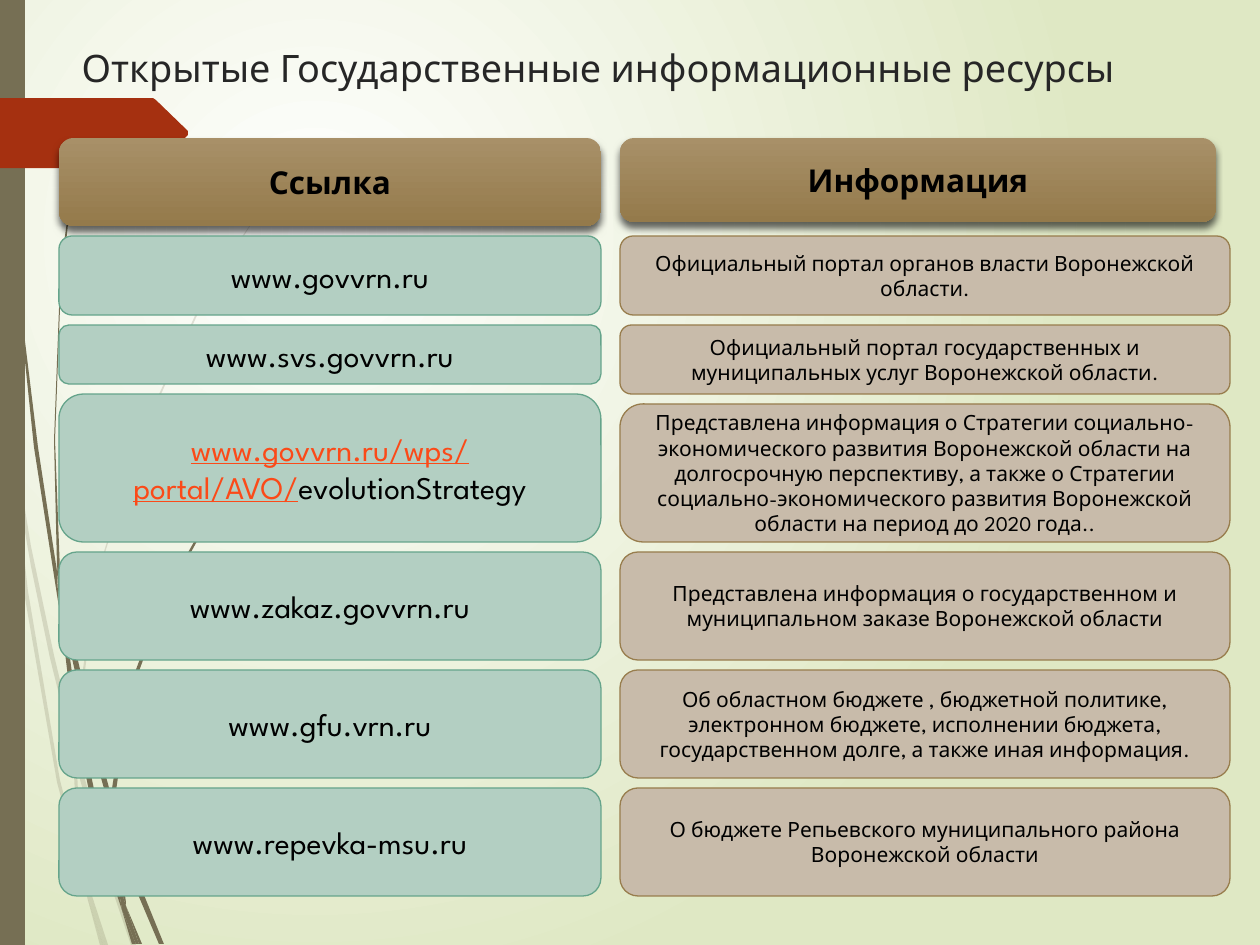
"""Build a slide listing open government information resources in two columns."""
import pptx
import pptx.util
import pptx.oxml
import pptx.dml.color
import pptx.enum.text
import pptx.enum.shapes
import pptx.oxml.ns

PX = 914400 / 126
FONT = "League Spartan"
COLORS = {
    "light": "FFFFFF", "meadow": "DFE8C4", "stem": "766F54", "tag": "A53010",
    "title": "262626", "text": "000000", "link": "FB4A18",
    "head_top": "A89068", "head_bottom": "947A4B",
    "green": "B3CFC2", "green_line": "65A48B",
    "tan": "C8BBAA", "tan_line": "987D4D",
}
TITLE = "Открытые Государственные информационные ресурсы"
TOP, GAP = 236, 10
COLUMNS = [
    {"head": "Ссылка", "head_box": (59, 138, 542, 88), "x": 59, "w": 542,
     "fill": "green", "line": "green_line", "size": 18,
     "rows": [
         (79, [[("www.govvrn.ru", "text")]]),
         (59, [[("www.svs.govvrn.ru", "text")]]),
         (148, [[("www.govvrn.ru/wps/", "link")],
                [("portal/AVO/", "link"), ("evolutionStrategy", "text")]]),
         (108, [[("www.zakaz.govvrn.ru", "text")]]),
         (108, [[("www.gfu.vrn.ru", "text")]]),
         (108, [[("www.repevka-msu.ru", "text")]]),
     ]},
    {"head": "Информация", "head_box": (620, 138, 596, 84), "x": 620, "w": 610,
     "fill": "tan", "line": "tan_line", "size": 12,
     "rows": [
         (79, [[("Официальный портал органов власти Воронежской области.", "text")]]),
         (69, [[("Официальный портал государственных и муниципальных услуг "
                 "Воронежской области.", "text")]]),
         (138, [[("Представлена информация о Стратегии социально-экономического развития "
                  "Воронежской области на долгосрочную перспективу, а также о Стратегии "
                  "социально-экономического развития Воронежской области на период "
                  "до 2020 года..", "text")]]),
         (108, [[("Представлена информация о государственном и муниципальном заказе "
                  "Воронежской области", "text")]]),
         (108, [[("Об областном бюджете , бюджетной политике, электронном бюджете, "
                  "исполнении бюджета, государственном долге, а также иная информация.",
                  "text")]]),
         (108, [[("О бюджете Репьевского муниципального района Воронежской области",
                  "text")]]),
     ]},
]
PALE_STEMS = [
    [(50, 658), (74, 755), (74, 738), (54, 655), (31, 546), (13, 435), (15, 474), (31, 566)],
    [(81, 765), (77, 751), (77, 769), (107, 874), (131, 945), (136, 945), (111, 872)],
    [(105, 945), (108, 945), (92, 896)],
    [(81, 861), (60, 780), (28, 591), (15, 474), (10, 441), (24, 592), (57, 782),
     (81, 873), (88, 900), (87, 891)],
    [(73, 755), (76, 814), (81, 861), (84, 872), (92, 896), (91, 890), (79, 814),
     (77, 769), (77, 766)],
    [(77, 736), (96, 582), (140, 440), (200, 309), (236, 249), (253, 221), (273, 194),
     (273, 193), (253, 221), (234, 248), (199, 307), (139, 438), (95, 581), (74, 736),
     (74, 738), (77, 751)],
    [(88, 900), (100, 945), (103, 945)],
    [(84, 872), (81, 861), (87, 891), (88, 900), (103, 945), (105, 945), (92, 896)],
]
DARK_STEMS = [
    [(6, 139), (18, 294), (34, 447), (58, 601), (59, 606), (57, 576), (57, 571),
     (38, 447), (19, 292), (8, 137), (5, 60), (4, 0), (3, 0), (3, 60)],
    [(92, 746), (111, 813), (111, 798), (111, 795), (97, 743), (63, 595), (67, 636)],
    [(118, 818), (115, 808), (115, 827), (137, 892), (159, 944), (164, 944), (142, 890)],
    [(115, 871), (102, 828), (76, 701), (67, 636), (59, 601), (71, 702), (97, 830),
     (116, 892), (122, 910), (121, 903)],
    [(63, 595), (60, 571), (55, 440), (60, 309), (66, 243), (73, 178), (64, 243),
     (59, 309), (54, 440), (57, 566), (62, 595)],
    [(139, 944), (142, 944), (126, 906)],
    [(59, 601), (67, 636), (63, 595), (62, 595), (57, 566), (57, 571)],
    [(115, 798), (130, 696), (165, 600), (213, 512), (241, 471), (256, 452), (272, 433),
     (271, 433), (256, 451), (241, 470), (212, 510), (163, 597), (127, 694), (111, 795),
     (115, 808)],
    [(122, 910), (132, 944), (136, 944)],
    [(111, 813), (115, 871), (121, 890), (126, 906), (126, 902), (115, 827), (113, 820)],
    [(121, 890), (115, 871), (121, 903), (122, 910), (136, 944), (139, 944), (126, 906)],
]
TAG = [(188, 135), (156, 167), (153, 168), (0, 168), (0, 98), (153, 98), (156, 100), (188, 131)]
SHADOW = ('<a:outerShdw %s blurRad="50800" dist="38100" dir="5400000" rotWithShape="0">'
          '<a:srgbClr val="000000"><a:alpha val="60000"/></a:srgbClr></a:outerShdw>'
          % pptx.oxml.ns.nsdecls("a"))
RADIAL = ('<a:path %s path="circle"><a:fillToRect l="50000" t="50000" r="100000" b="100000"/>'
          '</a:path>' % pptx.oxml.ns.nsdecls("a"))


def rgb(name):
    return pptx.dml.color.RGBColor.from_string(COLORS[name])


def emu(*values):
    return [round(v * PX) for v in values]


def paint(sp, fill, line=None):
    sp.shadow.inherit = False
    sp.fill.solid()
    sp.fill.fore_color.rgb = rgb(fill)
    if line:
        sp.line.color.rgb = rgb(line)
        sp.line.width = pptx.util.Pt(0.75)
    else:
        sp.line.fill.background()


def grade(fill, *names):
    fill.gradient()
    for stop, name in zip(fill.gradient_stops, names):
        stop.color.rgb = rgb(name)
    for stop, position in zip(fill.gradient_stops, (0, 1)):
        stop.position = position


def add_outline(s, points, fill, alpha=None):
    builder = s.shapes.build_freeform(*points[0], scale=PX)
    builder.add_line_segments(points[1:], close=True)
    sp = builder.convert_to_shape()
    paint(sp, fill)
    if alpha:
        color = sp.fill._xPr.find(".//" + pptx.oxml.ns.qn("a:srgbClr"))
        color.append(pptx.oxml.parse_xml(
            '<a:alpha %s val="%d"/>' % (pptx.oxml.ns.nsdecls("a"), alpha * 1000)))


def add_card(s, box, lines, size, fill, line=None, bold=False):
    sp = s.shapes.add_shape(pptx.enum.shapes.MSO_SHAPE.ROUNDED_RECTANGLE, *emu(*box))
    paint(sp, fill, line)
    tf = sp.text_frame
    tf.word_wrap = True
    tf.vertical_anchor = pptx.enum.text.MSO_ANCHOR.MIDDLE
    for i, runs in enumerate(lines):
        p = tf.add_paragraph() if i else tf.paragraphs[0]
        p.alignment = pptx.enum.text.PP_ALIGN.CENTER
        p.font.name, p.font.size, p.font.bold = FONT, pptx.util.Pt(size), bold
        for text, color in runs:
            r = p.add_run()
            r.text = text
            r.font.color.rgb = rgb(color)
            if color == "link":
                r.font.underline = True
    return sp


def main():
    prs = pptx.Presentation()
    prs.slide_width, prs.slide_height = emu(1260, 945)
    s = prs.slides.add_slide(prs.slide_layouts[5])

    bg = s.background.fill
    grade(bg, "light", "meadow")
    lin = s._element.find(".//" + pptx.oxml.ns.qn("a:lin"))
    lin.getparent().replace(lin, pptx.oxml.parse_xml(RADIAL))

    for points in PALE_STEMS:
        add_outline(s, points, "stem", 20)
    for points in DARK_STEMS:
        add_outline(s, points, "stem")
    bar = s.shapes.add_shape(pptx.enum.shapes.MSO_SHAPE.RECTANGLE, *emu(0, 0, 25, 945))
    paint(bar, "stem")
    add_outline(s, TAG, "tag")

    title = s.shapes.title
    title.left, title.top, title.width, title.height = emu(69, 38, 1128, 81)
    tf = title.text_frame
    tf.text = TITLE
    tf.word_wrap = True
    tf.auto_size = pptx.enum.text.MSO_AUTO_SIZE.NONE
    tf.vertical_anchor = pptx.enum.text.MSO_ANCHOR.TOP
    p = tf.paragraphs[0]
    p.alignment = pptx.enum.text.PP_ALIGN.LEFT
    p.font.name, p.font.size = FONT, pptx.util.Pt(21.6)
    p.font.color.rgb = rgb("title")

    for col in COLUMNS:
        head = add_card(s, col["head_box"], [[(col["head"], "text")]], 18, "head_top", bold=True)
        grade(head.fill, "head_top", "head_bottom")
        head.fill.gradient_angle = 270
        head._element.spPr.find(pptx.oxml.ns.qn("a:effectLst")).append(
            pptx.oxml.parse_xml(SHADOW))
        y = TOP
        for height, lines in col["rows"]:
            add_card(s, (col["x"], y, col["w"], height), lines, col["size"],
                     col["fill"], col["line"])
            y += height + GAP

    prs.save("out.pptx")


if __name__ == "__main__":
    main()
